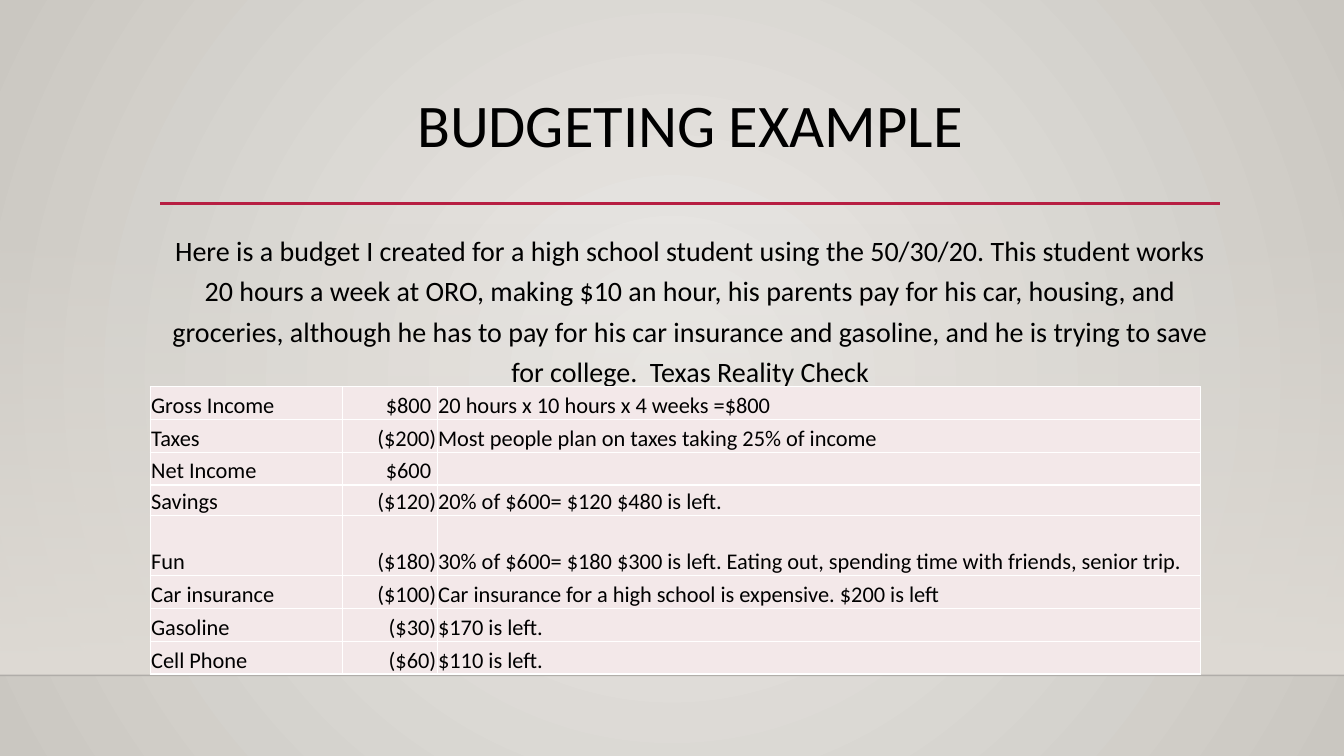
from lxml.etree import SubElement
from pptx import Presentation
from pptx.dml.color import RGBColor
from pptx.enum.shapes import MSO_CONNECTOR as Connector, MSO_SHAPE as Shape
from pptx.enum.text import MSO_ANCHOR as Anchor, PP_ALIGN as Align
from pptx.oxml.ns import qn
from pptx.util import Pt

COLORS = {
    "text": "000000", "accent": "B71E42", "floor": "DFDBD5", "floor_edge": "000001",
    "glow": "ECEAE7", "shade": "CAC7C1", "cell": "F3E8E9", "border": "FFFFFF",
}
WIDTH, HEIGHT = 960, 540
FLOOR_TOP, FLOOR_EDGE = 159, 482.4
LEFT, CONTENT_WIDTH = 114.5, 757

STORY = (
    "Here is a budget I created for a high school student using the 50/30/20. "
    "This student works 20 hours a week at ORO, making $10 an hour, his parents pay "
    "for his car, housing, and groceries, although he has to pay for his car insurance "
    "and gasoline, and he is trying to save for college.  Texas Reality Check"
)
BUDGET = [
    ("Gross Income", "$800 ", "20 hours x 10 hours x 4 weeks =$800"),
    ("Taxes", "($200)", "Most people plan on taxes taking 25% of income"),
    ("Net Income", "$600 ", ""),
    ("Savings", "($120)", "20% of $600= $120 $480 is left."),
    ("Fun", "($180)", "30% of $600= $180 $300 is left. Eating out, "
                      "spending time with friends, senior trip."),
    ("Car insurance", "($100)", "Car insurance for a high school is expensive. $200 is left"),
    ("Gasoline", "($30)", "$170 is left."),
    ("Cell Phone", "($60)", "$110 is left."),
]
COLUMN_WIDTHS = [137.5, 67.5, 545.5]
COLUMN_ALIGNS = [Align.LEFT, Align.RIGHT, Align.LEFT]
ROW_HEIGHTS = [23.4] * 3 + [22, 43] + [23.4] * 3


def rgb(name):
    return RGBColor.from_string(COLORS[name])


def set_opacity(parent, percent):
    color = next(parent.iter(qn("a:srgbClr")))
    SubElement(color, qn("a:alpha"), val=str(percent * 1000))


class SlideBuilder:
    font = "Calibri"

    def __init__(self, deck):
        self.slide = deck.slides.add_slide(deck.slide_layouts[5])

    def background(self, inner, outer):
        fill = self.slide.background.fill
        fill.gradient()
        for stop, name in zip(fill.gradient_stops, (inner, outer)):
            stop.color.rgb = rgb(name)
        linear = next(self.slide.element.iter(qn("a:lin")))
        gradient = linear.getparent()
        gradient.remove(linear)
        circle = SubElement(gradient, qn("a:path"), path="circle")
        SubElement(circle, qn("a:fillToRect"), l="50000", t="50000", r="50000", b="50000")

    def fading_panel(self, left, top, width, height, color):
        panel = self.slide.shapes.add_shape(
            Shape.RECTANGLE, Pt(left), Pt(top), Pt(width), Pt(height))
        panel.shadow.inherit = False
        panel.line.fill.background()
        panel.fill.gradient()
        panel.fill.gradient_angle = 270
        for stop in panel.fill.gradient_stops:
            stop.color.rgb = rgb(color)
        set_opacity(panel.element.spPr, 0)

    def rule(self, left, top, width, color, weight, opacity=100):
        line = self.slide.shapes.add_connector(
            Connector.STRAIGHT, Pt(left), Pt(top), Pt(left + width), Pt(top))
        line.line.color.rgb = rgb(color)
        line.line.width = Pt(weight)
        properties = line.element.spPr
        if opacity < 100:
            set_opacity(properties, opacity)
        SubElement(properties, qn("a:effectLst"))

    def fill_text(self, frame, text, size, align, spacing=None):
        para = frame.paragraphs[0]
        para.text = text
        para.alignment = align
        para.line_spacing = spacing
        para.font.name = self.font
        para.font.size = Pt(size)
        para.font.color.rgb = rgb("text")

    def title(self, text, left, top, width, height):
        box = self.slide.shapes.title
        box.left, box.top, box.width, box.height = map(Pt, (left, top, width, height))
        box.text_frame.vertical_anchor = Anchor.MIDDLE
        self.fill_text(box.text_frame, text, 43.2, Align.CENTER, 0.9)

    def text(self, text, left, top, width, height):
        box = self.slide.shapes.add_textbox(Pt(left), Pt(top), Pt(width), Pt(height))
        box.text_frame.word_wrap = True
        self.fill_text(box.text_frame, text, 20, Align.CENTER, 1.2)

    def cell(self, cell, text, align):
        cell.margin_left = cell.margin_right = cell.margin_top = Pt(0.7)
        cell.margin_bottom = 0
        cell.vertical_anchor = Anchor.BOTTOM
        self.fill_text(cell.text_frame, text, 16, align)
        properties = cell._tc.get_or_add_tcPr()
        for side in ("lnL", "lnR", "lnT", "lnB"):
            border = SubElement(properties, qn(f"a:{side}"), w=str(Pt(1)))
            solid = SubElement(border, qn("a:solidFill"))
            SubElement(solid, qn("a:srgbClr"), val=COLORS["border"])
        cell.fill.solid()
        cell.fill.fore_color.rgb = rgb("cell")

    def table(self, rows, left, top):
        table = self.slide.shapes.add_table(
            len(rows), len(COLUMN_WIDTHS), Pt(left), Pt(top),
            Pt(sum(COLUMN_WIDTHS)), Pt(sum(ROW_HEIGHTS))).table
        table.first_row = table.horz_banding = False
        for column, width in zip(table.columns, COLUMN_WIDTHS):
            column.width = Pt(width)
        for row, height, values in zip(table.rows, ROW_HEIGHTS, rows):
            row.height = Pt(height)
            for cell, value, align in zip(row.cells, values, COLUMN_ALIGNS):
                self.cell(cell, value, align)


def main():
    deck = Presentation()
    deck.slide_width, deck.slide_height = Pt(WIDTH), Pt(HEIGHT)
    page = SlideBuilder(deck)

    # Backdrop
    page.background("glow", "shade")
    page.fading_panel(0, FLOOR_TOP, WIDTH, FLOOR_EDGE - FLOOR_TOP, "floor")
    page.rule(0, FLOOR_EDGE, WIDTH, "floor_edge", 1, opacity=20)

    # Heading and introduction
    page.rule(LEFT, 145.4, CONTENT_WIDTH, "accent", 2.5)
    page.title("BUDGETING EXAMPLE", LEFT, 64, CONTENT_WIDTH, 55)
    page.text(STORY, LEFT, 158.4, CONTENT_WIDTH, 273)

    # Budget
    page.table(BUDGET, 107.3, 276.2)

    deck.save("out.pptx")


if __name__ == "__main__":
    main()
